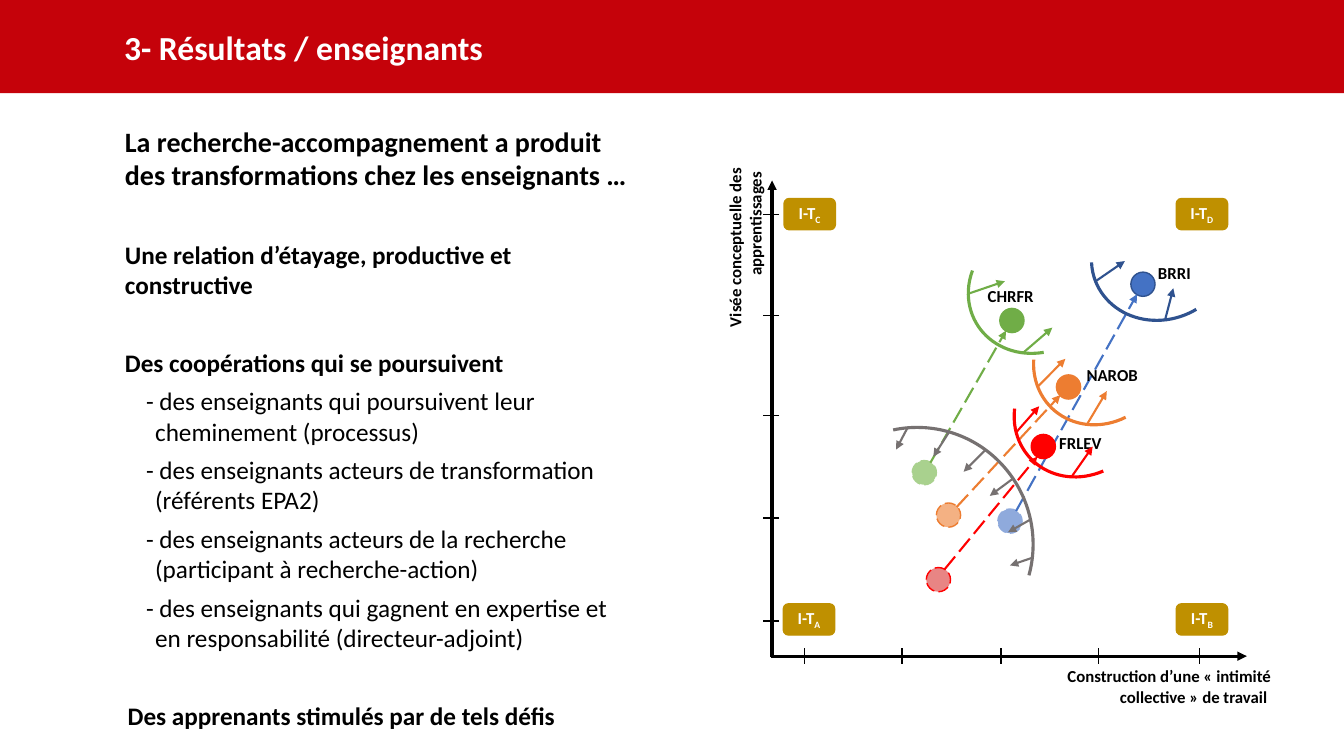
"""Build the slide on teacher results, with the trajectory diagram."""
from dataclasses import dataclass

from lxml.etree import SubElement
from pptx import Presentation
from pptx.dml.color import RGBColor
from pptx.enum.dml import MSO_LINE
from pptx.enum.shapes import MSO_CONNECTOR, MSO_SHAPE
from pptx.enum.text import MSO_ANCHOR, MSO_AUTO_SIZE, PP_ALIGN
from pptx.oxml.ns import qn
from pptx.util import Pt


@dataclass(frozen=True)
class Theme:
    font: str = "Calibri"
    title: int = 24
    lead: int = 20
    body: int = 18
    label: int = 12
    black: str = "000000"
    white: str = "FFFFFF"
    banner: str = "C5020A"
    gold: str = "BF9000"
    grey: str = "767171"
    blue: str = "4472C4"
    navy: str = "2F528F"
    pale_blue: str = "8FAADC"
    green: str = "70AD47"
    pale_green: str = "A9D18E"
    orange: str = "ED7D31"
    pale_orange: str = "F4B183"
    red: str = "FF0000"
    pale_red: str = "E88584"


theme = Theme()


def write(paragraph, text, size, color=theme.black, bold=True):
    run = paragraph.add_run()
    run.text = text
    run.font.name = theme.font
    run.font.size = Pt(size)
    run.font.bold = bold
    run.font.color.rgb = RGBColor.from_string(color)
    return run


def draw_line(points, color, width, arrow=True, dashed=False):
    line = slide.shapes.add_connector(MSO_CONNECTOR.STRAIGHT, *map(Pt, points))
    line.line.color.rgb = RGBColor.from_string(color)
    line.line.width = Pt(width)
    if dashed:
        line.line.dash_style = MSO_LINE.LONG_DASH
    if arrow:
        SubElement(line.get_or_add_ln(), qn("a:tailEnd"), type="triangle")
    SubElement(line.element.spPr, qn("a:effectLst"))


prs = Presentation()
prs.slide_width, prs.slide_height = Pt(960), Pt(540)
slide = prs.slides.add_slide(prs.slide_layouts[1])

banner = slide.shapes.title
banner.left, banner.top, banner.width, banner.height = Pt(0), Pt(0), Pt(960), Pt(66.5)
banner.fill.solid()
banner.fill.fore_color.rgb = RGBColor.from_string(theme.banner)
banner.text_frame.auto_size = MSO_AUTO_SIZE.NONE
banner.text_frame.vertical_anchor = MSO_ANCHOR.MIDDLE
banner.text_frame.margin_left = Pt(88.6)
heading = banner.text_frame.paragraphs[0]
heading.alignment = PP_ALIGN.LEFT
heading.space_after = Pt(6)
write(heading, "3- Résultats / enseignants", theme.title, theme.white)

findings = slide.placeholders[1]
findings.left, findings.top, findings.width, findings.height = Pt(82), Pt(85), Pt(378), Pt(443.5)
findings.text_frame.auto_size = MSO_AUTO_SIZE.NONE
findings.text_frame.vertical_anchor = MSO_ANCHOR.TOP
SECTION_GAP, ITEM_GAP = 34, 6
findings_lines = [
    ("La recherche-accompagnement a produit des transformations chez les enseignants …",
     theme.lead, True, 0, 0, SECTION_GAP),
    ("Une relation d’étayage, productive et constructive", theme.body, True, 0, 0, SECTION_GAP),
    ("Des coopérations qui se poursuivent", theme.body, True, 0, 0, ITEM_GAP),
    ("- des enseignants qui poursuivent leur cheminement (processus)",
     theme.body, False, 21.6, -6.5, ITEM_GAP),
    ("- des enseignants acteurs de transformation (référents EPA2)",
     theme.body, False, 21.6, -6.5, ITEM_GAP),
    ("- des enseignants acteurs de la recherche (participant à recherche-action)",
     theme.body, False, 21.6, -6.5, ITEM_GAP),
    ("- des enseignants qui gagnent en expertise et en responsabilité (directeur-adjoint)",
     theme.body, False, 21.6, -6.5, SECTION_GAP),
    ("Des apprenants stimulés par de tels défis", theme.body, True, 1, 1, ITEM_GAP),
]
for position, (text, size, bold, margin, indent, gap) in enumerate(findings_lines):
    frame = findings.text_frame
    finding = frame.add_paragraph() if position else frame.paragraphs[0]
    finding.alignment = PP_ALIGN.LEFT
    finding.space_before, finding.space_after = Pt(0), Pt(gap)
    properties = finding._p.get_or_add_pPr()
    properties.set("marL", str(Pt(margin)))
    properties.set("indent", str(Pt(indent)))
    SubElement(properties, qn("a:buNone"))
    write(finding, text, size, bold=bold)

draw_line((551.5, 469.4, 551.5, 128.9), theme.black, 2.25)
draw_line((550.8, 468.7, 890.6, 468.7), theme.black, 2.25)
for y in (153.4, 225.4, 296.6, 370.1, 443.5):
    draw_line((556.6, y, 545, y), theme.black, 1, arrow=False)
for x in (574.6, 644.4, 715, 784.8, 856.8):
    draw_line((x, 463, x, 474.5), theme.black, 1, arrow=False)

axis_titles = [
    ("Construction d’une « intimité collective » de travail ", 733.7, 472.3, 181.4, 0),
    ("Visée conceptuelle des apprentissages ", 455, 172.1, 154.1, 270),
]
for text, x, y, width, rotation in axis_titles:
    axis_title = slide.shapes.add_textbox(Pt(x), Pt(y), Pt(width), Pt(36))
    axis_title.rotation = rotation
    axis_title.text_frame.word_wrap = True
    axis_title.text_frame.paragraphs[0].alignment = PP_ALIGN.RIGHT
    write(axis_title.text_frame.paragraphs[0], text, theme.label)

teachers = [
    ("BRRI", (820.1, 184.3, 38.2), (712.8, 363.6), (807.8, 194.4), (725.8, 365, 812.2, 210.2),
     theme.blue, theme.navy, theme.pale_blue, theme.pale_blue),
    ("CHRFR", (698.4, 200.9, 47.5), (651.6, 329), (714.2, 220.3), (664.6, 330.5, 718.6, 236.2),
     theme.green, theme.green, theme.pale_green, theme.pale_green),
    ("NAROB", (769, 257, 51.8), (668.9, 359.3), (754.6, 267.8), (683.3, 362.2, 757.4, 282.2),
     theme.orange, theme.orange, theme.pale_orange, theme.orange),
    ("FRLEV", (749.5, 305.3, 45.4), (661.7, 405.4), (736.6, 310.3), (674.6, 406.8, 740.9, 326.2),
     theme.red, theme.red, theme.pale_red, theme.red),
]
for name, (x, y, width), start, end, path_points, color, edge, pale, pale_edge in teachers:
    for corner, fill, outline in ((start, pale, pale_edge), (end, color, edge)):
        stage = slide.shapes.add_shape(MSO_SHAPE.OVAL, *map(Pt, corner), Pt(17.3), Pt(17.3))
        stage.shadow.inherit = False
        stage.fill.solid()
        stage.fill.fore_color.rgb = RGBColor.from_string(fill)
        stage.line.color.rgb = RGBColor.from_string(outline)
        stage.line.width = Pt(1)
        if corner == start:
            stage.line.dash_style = MSO_LINE.LONG_DASH
    draw_line(path_points, color, 1.5, dashed=True)
    teacher = slide.shapes.add_textbox(Pt(x), Pt(y), Pt(width), Pt(21.6))
    teacher.text_frame.word_wrap = False
    write(teacher.text_frame.paragraphs[0], name, theme.label)

WIDE, NARROW = (154.87, 9.32), (176.38, 26.66)
fronts = [
    (theme.grey, (572.4, 305.3, 165.6, 167), 0, WIDE,
     [(678.2, 308.2, 666.7, 326.2), (704.2, 321.1, 688.3, 337), (724.3, 341.3, 707, 354.2),
      (736.6, 370.8, 720, 380.2), (738, 398.2, 721.4, 403.9), (648, 306, 640.1, 321.1)]),
    (theme.navy, (779, 136.8, 100.8, 91.4), 158.8, WIDE,
     [(782.6, 200.9, 803.5, 186.5), (832.3, 228.2, 838.1, 205.9)]),
    (theme.green, (690.5, 159.8, 100.8, 91.4), 150.4, NARROW,
     [(692.6, 209.5, 717.8, 200.9), (730.8, 252, 751.7, 234)]),
    (theme.orange, (735.8, 209.5, 100.8, 91.4), 133.5, NARROW,
     [(741.6, 275.8, 761, 256.3), (776.9, 302.4, 790.6, 279.4)]),
    (theme.red, (722.2, 247, 100.8, 91.4), 136.6, NARROW,
     [(725.8, 308.9, 742.3, 290.2), (765.4, 340.6, 780.5, 319)]),
]
for color, box, rotation, sweep, pushes in fronts:
    front = slide.shapes.add_shape(MSO_SHAPE.ARC, *map(Pt, box))
    front.shadow.inherit = False
    front.rotation = rotation
    front.adjustments[0], front.adjustments[1] = sweep
    front.fill.background()
    front.line.color.rgb = RGBColor.from_string(color)
    front.line.width = Pt(2.25)
    for push in pushes:
        draw_line(push, color, 1.5)

for letter, x, y in (("C", 560, 141.8), ("A", 559.5, 431.3), ("D", 840.2, 141.8), ("B", 840.2, 431.3)):
    quadrant = slide.shapes.add_shape(MSO_SHAPE.ROUNDED_RECTANGLE, Pt(x), Pt(y), Pt(36.7), Pt(22.3))
    quadrant.shadow.inherit = False
    quadrant.fill.solid()
    quadrant.fill.fore_color.rgb = RGBColor.from_string(theme.gold)
    quadrant.line.color.rgb = RGBColor.from_string(theme.gold)
    quadrant.line.width = Pt(1)
    quadrant.text_frame.margin_left = quadrant.text_frame.margin_right = Pt(0)
    quadrant.text_frame.vertical_anchor = MSO_ANCHOR.MIDDLE
    code = quadrant.text_frame.paragraphs[0]
    code.alignment = PP_ALIGN.CENTER
    write(code, "I-T", theme.label, theme.white)
    subscript = write(code, letter, theme.label, theme.white)
    subscript._r.get_or_add_rPr().set("baseline", "-25000")

prs.save("out.pptx")
